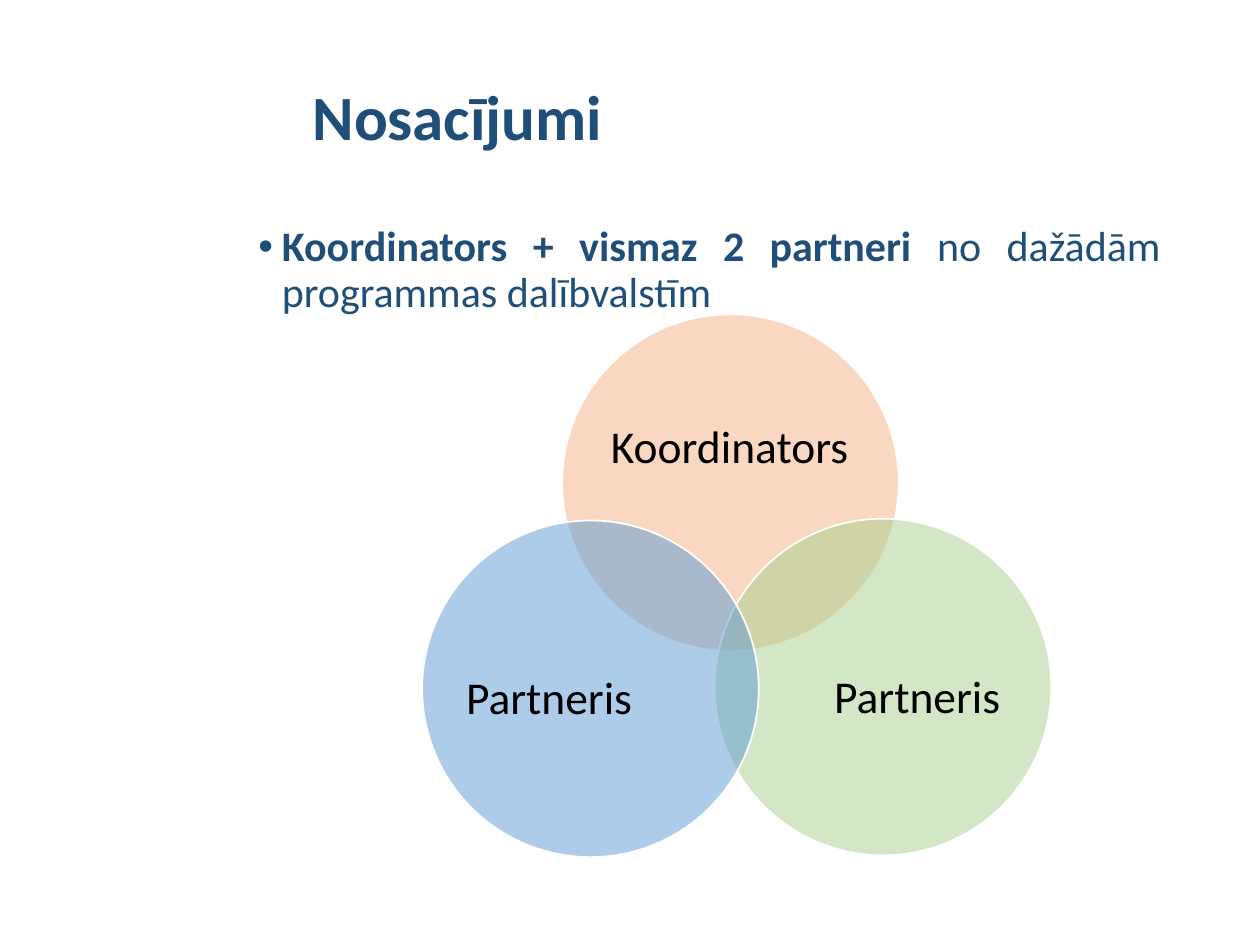
from lxml import etree
from pptx import Presentation
from pptx.dml.color import RGBColor
from pptx.enum.shapes import MSO_SHAPE
from pptx.enum.text import MSO_ANCHOR, MSO_AUTO_SIZE, PP_ALIGN
from pptx.oxml.ns import qn
from pptx.util import Pt

OVAL = MSO_SHAPE.OVAL
TOP, MIDDLE = MSO_ANCHOR.TOP, MSO_ANCHOR.MIDDLE
LEFT, CENTER, JUSTIFY = PP_ALIGN.LEFT, PP_ALIGN.CENTER, PP_ALIGN.JUSTIFY
FONT = "Calibri"
NAVY, BLACK, WHITE = "1F4E79", "000000", "FFFFFF"
SIZE = 192.4

# Circle corner, fill, label box, label
CIRCLES = [
    ((321.2, 179.6), "F4B183", (346.5, 213.1, 141, 86.4), "Koordinators"),
    ((408.4, 296.4), "A9D18E", (466.6, 346.3, 115.2, 105.8), "Partneris"),
    ((241.2, 297.4), "5B9BD5", (259.2, 347, 115.2, 105.8), "Partneris "),
]


def color(code):
    return RGBColor.from_string(code)


def place(shape, box):
    shape.left, shape.top, shape.width, shape.height = map(Pt, box)


def write(frame, runs, size, code, align, anchor):
    """Fill the first paragraph with (text, bold) runs."""
    frame.word_wrap = True
    frame.auto_size = MSO_AUTO_SIZE.NONE
    frame.vertical_anchor = anchor
    para = frame.paragraphs[0]
    para.alignment = align
    para.line_spacing = 0.9
    para.space_before = Pt(0)
    for text, bold in runs:
        run = para.add_run()
        run.text = text
        font = run.font
        font.name, font.size, font.bold = FONT, Pt(size), bold
        font.color.rgb = color(code)
    return para


def add_bullet(para, indent):
    props = para._p.get_or_add_pPr()
    props.set("marL", str(Pt(indent)))
    props.set("indent", str(-Pt(indent)))
    face = etree.SubElement(props, qn("a:buFont"))
    face.set("typeface", "Arial")
    mark = etree.SubElement(props, qn("a:buChar"))
    mark.set("char", "•")


def add_circle(slide, corner, fill):
    circle = slide.shapes.add_shape(OVAL, *map(Pt, (*corner, SIZE, SIZE)))
    circle.shadow.inherit = False
    circle.fill.solid()
    circle.fill.fore_color.rgb = color(fill)
    tint = circle._element.spPr.find(qn("a:solidFill"))[0]
    etree.SubElement(tint, qn("a:alpha")).set("val", "50000")
    circle.line.color.rgb = color(WHITE)
    circle.line.width = Pt(1)


def add_label(slide, box, text):
    frame = slide.shapes.add_textbox(*map(Pt, box)).text_frame
    frame.margin_left = frame.margin_right = 0
    frame.margin_top = frame.margin_bottom = 0
    write(frame, [(text, False)], 26, BLACK, CENTER, MIDDLE)


def main():
    deck = Presentation()
    deck.slide_width, deck.slide_height = Pt(720), Pt(540)
    slide = deck.slides.add_slide(deck.slide_layouts[1])

    title, body = slide.placeholders
    place(title, (171.4, 28.8, 499, 80))
    write(title.text_frame, [("Nosacījumi", True)], 36, NAVY, LEFT, MIDDLE)

    place(body, (140.4, 125.3, 530, 360.7))
    runs = [("Koordinators + vismaz 2 partneri ", True),
            ("no dažādām programmas dalībvalstīm", False)]
    para = write(body.text_frame, runs, 24, NAVY, JUSTIFY, TOP)
    add_bullet(para, 13.5)

    for corner, fill, box, text in CIRCLES:
        add_circle(slide, corner, fill)
        add_label(slide, box, text)
    deck.save("out.pptx")


if __name__ == "__main__":
    main()
